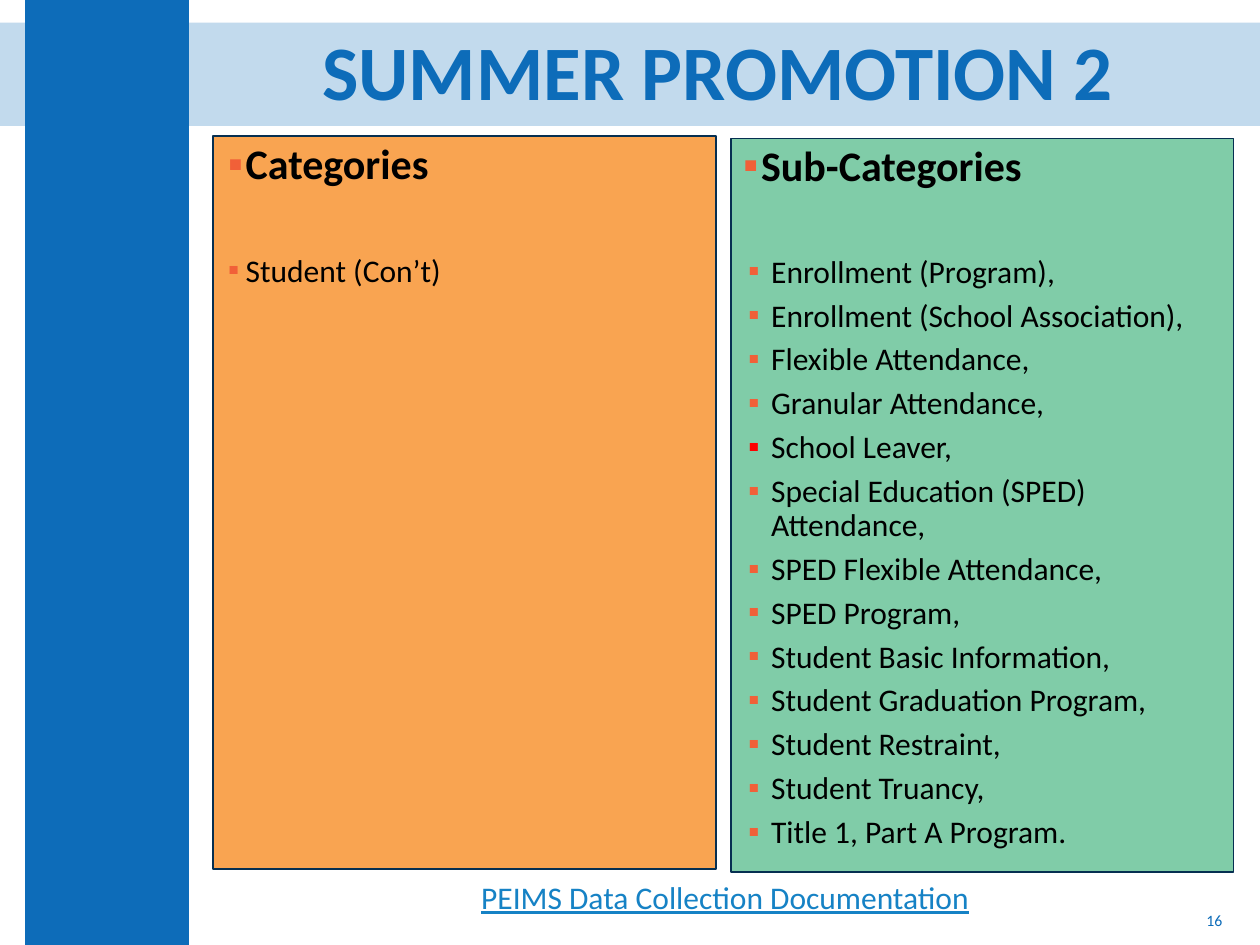
import lxml.etree
import pptx
import pptx.dml.color
import pptx.enum.shapes
import pptx.enum.text
import pptx.oxml.ns
import pptx.util

Inches = pptx.util.Inches
Pt = pptx.util.Pt
Align = pptx.enum.text.PP_ALIGN
Anchor = pptx.enum.text.MSO_ANCHOR

FONT = "Calibri"
BLUE = "0D6CB9"
NAVY = "062F51"
BLACK = "000000"
CORAL = "F16038"
RED = "FF0000"
GAP = 5.6
HEAD_GAP = 37.6

TOPICS = [
    "Enrollment (Program),",
    "Enrollment (School Association),",
    "Flexible Attendance,",
    "Granular Attendance,",
    "School Leaver,",
    "Special Education (SPED) Attendance,",
    "SPED Flexible Attendance,",
    "SPED Program,",
    "Student Basic Information,",
    "Student Graduation Program,",
    "Student Restraint,",
    "Student Truancy,",
    "Title 1, Part A Program.",
]


def color(code):
    return pptx.dml.color.RGBColor.from_string(code)


def add_node(parent, tag, **attrs):
    node = lxml.etree.SubElement(parent, pptx.oxml.ns.qn(tag))
    for key, value in attrs.items():
        node.set(key, value)
    return node


def add_rect(slide, box, fill, line=None, alpha=None):
    """Draw a plain rectangle; alpha is its opacity in percent."""
    kind = pptx.enum.shapes.MSO_SHAPE.RECTANGLE
    rect = slide.shapes.add_shape(kind, *map(Inches, box))
    rect.shadow.inherit = False
    rect.fill.solid()
    rect.fill.fore_color.rgb = color(fill)
    if line:
        rect.line.color.rgb = color(line)
        rect.line.width = Pt(1)
    else:
        rect.line.fill.background()
    if alpha:
        tint = rect.element.spPr.find(".//" + pptx.oxml.ns.qn("a:srgbClr"))
        add_node(tint, "a:alpha", val=str(alpha * 1000))


def add_run(para, text, size, tone, bold=False, under=False):
    run = para.add_run()
    run.text = text
    font = run.font
    font.name = FONT
    font.size = Pt(size)
    font.bold = bold
    font.underline = under
    font.color.rgb = color(tone)


def set_frame(shape, anchor=Anchor.TOP):
    frame = shape.text_frame
    frame.word_wrap = True
    frame.auto_size = pptx.enum.text.MSO_AUTO_SIZE.NONE
    frame.vertical_anchor = anchor
    return frame


def place(holder, box):
    """Move a placeholder to the box and in front of earlier shapes."""
    holder.left, holder.top, holder.width, holder.height = map(Inches, box)
    holder.element.getparent().append(holder.element)


def set_title(holder, box, text):
    place(holder, box)
    para = set_frame(holder, Anchor.MIDDLE).paragraphs[0]
    para.alignment = Align.CENTER
    para.line_spacing = 0.9
    add_run(para, text, 44, BLUE, bold=True)


def set_bullet(para, left, hang, tone, before):
    para.alignment = Align.LEFT
    para.line_spacing = 0.9
    para.space_before = Pt(before)
    para.space_after = Pt(0)
    props = para._p.get_or_add_pPr()
    props.set("marL", str(Inches(left)))
    props.set("indent", str(-Inches(hang)))
    add_node(add_node(props, "a:buClr"), "a:srgbClr", val=tone)
    add_node(props, "a:buFont", typeface=FONT)
    add_node(props, "a:buChar", char="▪")


def set_list(holder, box, head, items, left, hang):
    """Fill a placeholder with a bold heading and bulleted items."""
    place(holder, box)
    frame = set_frame(holder)
    para = frame.paragraphs[0]
    set_bullet(para, 0.14, 0.14, CORAL, 0)
    add_run(para, head, 24, BLACK, bold=True)
    for rank, item in enumerate(items):
        para = frame.add_paragraph()
        tone = RED if item == "School Leaver," else CORAL
        set_bullet(para, left, hang, tone, GAP if rank else HEAD_GAP)
        add_run(para, item, 18, BLACK)


def add_text(slide, box, text, size, tone, align, anchor, under=False):
    label = slide.shapes.add_textbox(*map(Inches, box))
    para = set_frame(label, anchor).paragraphs[0]
    para.alignment = align
    add_run(para, text, size, tone, under=under)


def main():
    deck = pptx.Presentation()
    deck.slide_width, deck.slide_height = Inches(10), Inches(7.5)
    slide = deck.slides.add_slide(deck.slide_layouts[3])
    title, first, second = slide.placeholders

    add_rect(slide, (0, 0.18, 10, 0.82), BLUE, alpha=25)
    add_rect(slide, (0.2, 0, 1.3, 7.5), BLUE)
    set_title(title, (1.24, 0.19, 8.92, 0.82), "SUMMER PROMOTION 2")

    add_rect(slide, (5.8, 1.1, 3.99, 5.82), "80CCA8", NAVY)
    add_rect(slide, (1.69, 1.08, 3.99, 5.82), "F9A451", NAVY)
    set_list(first, (1.71, 1.09, 3.86, 5.09), "Categories",
             ["Student (Con’t)"], 0.14, 0.14)
    set_list(second, (5.8, 1.1, 3.99, 5.65), "Sub-Categories",
             TOPICS, 0.22, 0.18)

    add_text(slide, (1.71, 6.92, 8.09, 0.4),
             "PEIMS Data Collection Documentation", 18, "1682C5",
             Align.CENTER, Anchor.TOP, under=True)
    add_text(slide, (7.55, 7.1, 2.25, 0.4), "16", 9, BLUE,
             Align.RIGHT, Anchor.MIDDLE)
    deck.save("out.pptx")


if __name__ == "__main__":
    main()
